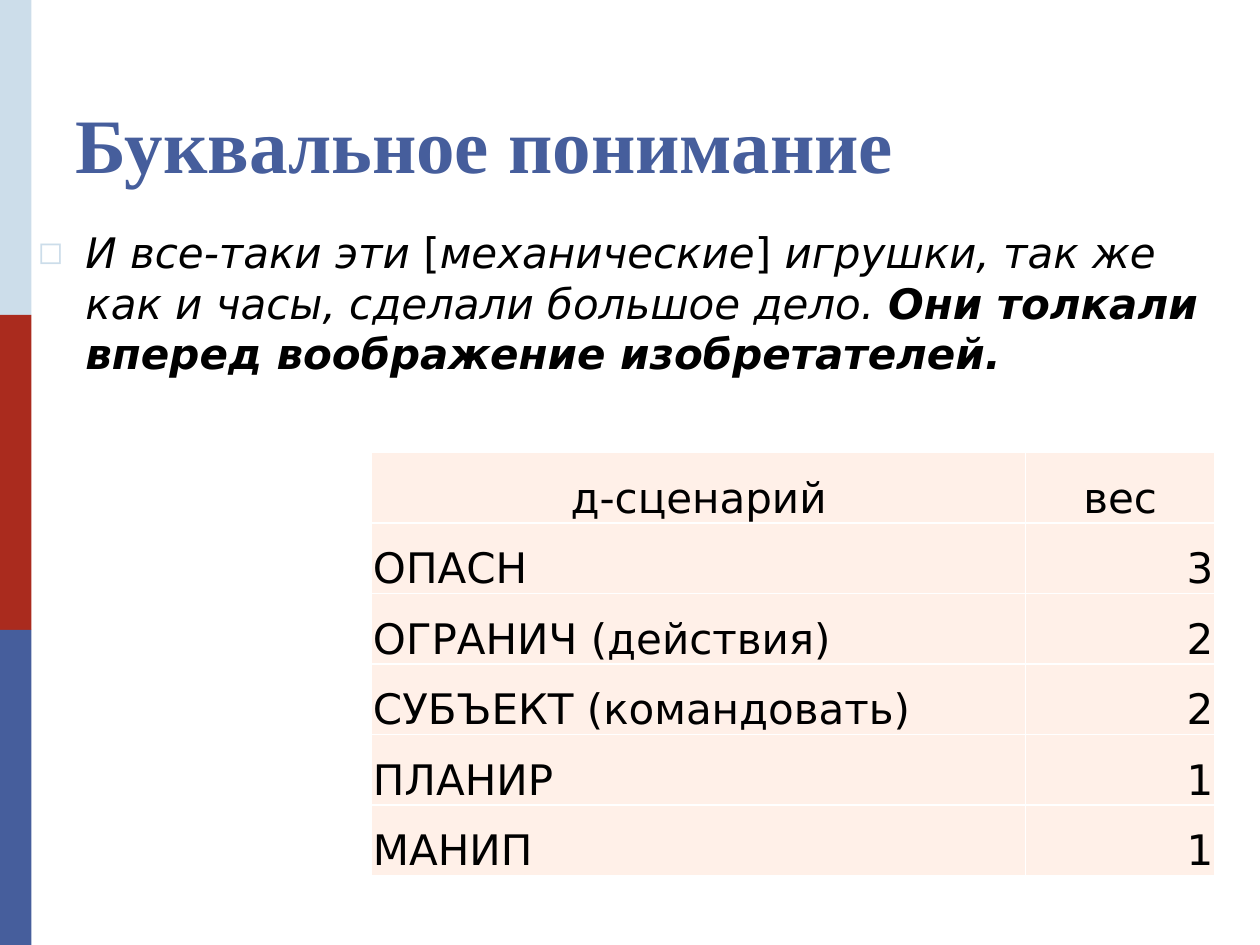
import pptx
import pptx.dml.color
import pptx.enum.shapes
import pptx.enum.text
import pptx.oxml
import pptx.oxml.ns
import pptx.util

Inches = pptx.util.Inches
Pt = pptx.util.Pt
RGBColor = pptx.dml.color.RGBColor
ALIGN = pptx.enum.text.PP_ALIGN
ANCHOR = pptx.enum.text.MSO_ANCHOR

PALE_BLUE = RGBColor(0xCC, 0xDD, 0xEA)
RED = RGBColor(0xAA, 0x2B, 0x1E)
BLUE = RGBColor(0x46, 0x5E, 0x9C)
PEACH = RGBColor(0xFF, 0xF0, 0xE8)
BLACK = RGBColor(0, 0, 0)
WHITE = RGBColor(0xFF, 0xFF, 0xFF)

TITLE = "Буквальное понимание"
QUOTE = [
    ("И все-таки эти ", {"italic": True}),
    ("[", {}),
    ("механические", {"italic": True}),
    ("] ", {}),
    ("игрушки, так же как и часы, сделали большое дело. ", {"italic": True}),
    ("Они толкали вперед воображение изобретателей.", {"italic": True, "bold": True}),
]
SCENARIOS = [
    ("д-сценарий", "вес"),
    ("ОПАСН", "3"),
    ("ОГРАНИЧ (действия)", "2"),
    ("СУБЪЕКТ (командовать)", "2"),
    ("ПЛАНИР", "1"),
    ("МАНИП", "1"),
]
COLUMN_WIDTHS = (5.19, 1.5)
ROW_HEIGHT = 0.56
BAND_COLORS = (PALE_BLUE, RED, BLUE)
BAND_HEIGHT = 7.5 / len(BAND_COLORS)


def add_text(paragraph, text, font="DejaVu Sans", size=24, color=BLACK, bold=False, italic=False):
    run = paragraph.add_run()
    run.text = text
    run.font.name = font
    run.font.size = Pt(size)
    run.font.color.rgb = color
    run.font.bold = bold
    run.font.italic = italic


def place(shape, left, top, width, height):
    shape.left, shape.top = Inches(left), Inches(top)
    shape.width, shape.height = Inches(width), Inches(height)


def add_xml(parent, xml):
    declaration = pptx.oxml.ns.nsdecls("a")
    parent.append(pptx.oxml.parse_xml(xml.replace(" ", f" {declaration} ", 1)))


def add_bullet(paragraph, hanging):
    properties = paragraph._p.get_or_add_pPr()
    properties.set("marL", str(Inches(hanging)))
    properties.set("indent", str(-Inches(hanging)))
    add_xml(properties, f'<a:buClr ><a:srgbClr val="{PALE_BLUE}"/></a:buClr>')
    add_xml(properties, '<a:buSzPct val="75000"/>')
    add_xml(properties, '<a:buFont typeface="DejaVu Sans"/>')
    add_xml(properties, '<a:buChar char="◻"/>')


def format_cell(cell, text, alignment):
    cell.vertical_anchor = ANCHOR.BOTTOM
    cell.margin_left = cell.margin_right = cell.margin_top = Inches(0.01)
    cell.margin_bottom = 0
    for side in "LRTB":
        add_xml(
            cell._tc.get_or_add_tcPr(),
            f'<a:ln{side} w="{Pt(1)}"><a:solidFill><a:srgbClr val="{WHITE}"/></a:solidFill></a:ln{side}>',
        )
    cell.fill.solid()
    cell.fill.fore_color.rgb = PEACH
    paragraph = cell.text_frame.paragraphs[0]
    paragraph.alignment = alignment
    add_text(paragraph, text)


def main():
    presentation = pptx.Presentation()
    presentation.slide_width, presentation.slide_height = Inches(10), Inches(7.5)
    slide = presentation.slides.add_slide(presentation.slide_layouts[5])

    for index, color in enumerate(BAND_COLORS):
        band = slide.shapes.add_shape(pptx.enum.shapes.MSO_SHAPE.RECTANGLE, 0, 0, 0, 0)
        place(band, 0, index * BAND_HEIGHT, 0.25, BAND_HEIGHT)
        band.shadow.inherit = False
        band.fill.solid()
        band.fill.fore_color.rgb = color
        band.line.fill.background()

    title = slide.shapes.title
    place(title, 0.5, 0.3, 9, 1.25)
    title.text_frame.vertical_anchor = ANCHOR.BOTTOM
    paragraph = title.text_frame.paragraphs[0]
    paragraph.alignment = ALIGN.LEFT
    add_text(paragraph, TITLE, font="Times New Roman", size=44, color=BLUE, bold=True)

    quote = slide.shapes.add_textbox(0, 0, 0, 0)
    place(quote, 0.2, 1.75, 9.5, 4.95)
    quote.text_frame.word_wrap = True
    paragraph = quote.text_frame.paragraphs[0]
    paragraph.space_before = Pt(4.8)
    add_bullet(paragraph, 0.38)
    for text, style in QUOTE:
        add_text(paragraph, text, **style)

    table = slide.shapes.add_table(
        len(SCENARIOS), len(COLUMN_WIDTHS), Inches(2.95), Inches(3.59),
        Inches(sum(COLUMN_WIDTHS)), Inches(ROW_HEIGHT * len(SCENARIOS)),
    ).table
    for column, width in zip(table.columns, COLUMN_WIDTHS):
        column.width = Inches(width)
    for row_index, values in enumerate(SCENARIOS):
        table.rows[row_index].height = Inches(ROW_HEIGHT)
        alignments = (ALIGN.LEFT, ALIGN.RIGHT) if row_index else (ALIGN.CENTER, ALIGN.CENTER)
        for column_index, (text, alignment) in enumerate(zip(values, alignments)):
            format_cell(table.cell(row_index, column_index), text, alignment)

    presentation.save("out.pptx")


if __name__ == "__main__":
    main()
